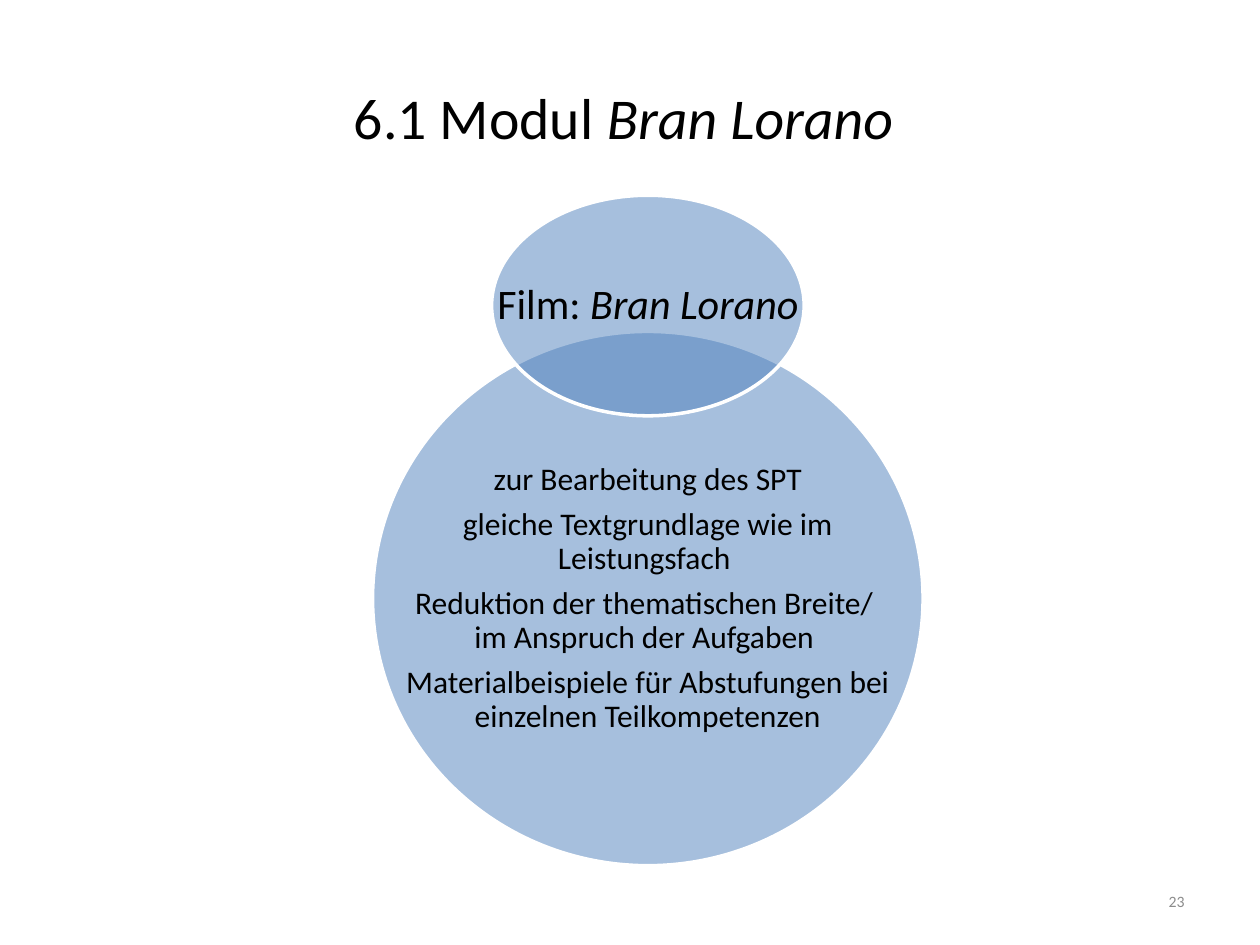
from typing import NamedTuple

from lxml import etree
from pptx import Presentation
from pptx.dml.color import RGBColor
from pptx.enum.shapes import MSO_SHAPE
from pptx.enum.text import MSO_ANCHOR, PP_ALIGN
from pptx.oxml.ns import qn
from pptx.util import Pt

ELLIPSE = MSO_SHAPE.OVAL
MIDDLE = MSO_ANCHOR.MIDDLE
CENTER, RIGHT = PP_ALIGN.CENTER, PP_ALIGN.RIGHT

FONT = "Calibri"
BLACK, WHITE, BLUE, GREY = "000000", "FFFFFF", "4F81BD", "8C8C8C"
FILM = "Bran Lorano"
TITLE_ONLY = 5


class Circle(NamedTuple):
    """An ellipse centred on the diagram axis, with its text."""
    top: float
    width: float
    height: float
    size: float
    lines: list[str]
    italic: str = ""


AXIS = 370.2
CIRCLES = [
    Circle(189.4, 314.6, 305.3, 18, [
        "zur Bearbeitung des SPT",
        "gleiche Textgrundlage wie im Leistungsfach ",
        "Reduktion der thematischen Breite/ \vim Anspruch der Aufgaben ",
        "Materialbeispiele für Abstufungen bei einzelnen Teilkompetenzen",
    ]),
    Circle(111.6, 178.6, 126, 24, ["Film:"], f" {FILM}"),
]


def rgb(color: str) -> RGBColor:
    return RGBColor.from_string(color)


def write(p, text: str, size: float, color: str, align, italic: str = "") -> None:
    """Fill a paragraph, with an optional italic ending."""
    p.text = text
    p.alignment = align
    if italic:
        r = p.add_run()
        r.text = italic
        r.font.italic = True
    for r in p.runs:
        r.font.name = FONT
        r.font.size = Pt(size)
        r.font.color.rgb = rgb(color)


def add_circle(s, c: Circle) -> None:
    box = [Pt(v) for v in (AXIS - c.width / 2, c.top, c.width, c.height)]
    sp = s.shapes.add_shape(ELLIPSE, *box)
    sp.shadow.inherit = False
    sp.fill.solid()
    sp.fill.fore_color.rgb = rgb(BLUE)
    fill = sp._element.spPr.find(qn("a:solidFill"))
    etree.SubElement(fill[0], qn("a:alpha"), val="50000")
    sp.line.color.rgb = rgb(WHITE)
    sp.line.width = Pt(2)

    # The lines run wider than an ellipse's own text area
    tf = s.shapes.add_textbox(*box).text_frame
    tf.word_wrap = True
    tf.vertical_anchor = MIDDLE
    tf.margin_left = tf.margin_right = tf.margin_top = tf.margin_bottom = Pt(2.2)
    for i, line in enumerate(c.lines):
        p = tf.add_paragraph() if i else tf.paragraphs[0]
        write(p, line, c.size, BLACK, CENTER, c.italic)
        p.line_spacing = 0.9
        p.space_after = Pt(0.35 * c.size)


def main() -> None:
    prs = Presentation()
    prs.slide_width, prs.slide_height = Pt(720), Pt(540)
    s = prs.slides.add_slide(prs.slide_layouts[TITLE_ONLY])

    # Title
    title = s.shapes.title
    title.left, title.top, title.width, title.height = Pt(36), Pt(21.6), Pt(648), Pt(90)
    title.text_frame.vertical_anchor = MIDDLE
    write(title.text_frame.paragraphs[0], "6.1 Modul ", 33, BLACK, CENTER, f"{FILM} ")

    # Slide number
    tf = s.shapes.add_textbox(Pt(516), Pt(500.5), Pt(168), Pt(28.75)).text_frame
    tf.word_wrap = True
    tf.vertical_anchor = MIDDLE
    write(tf.paragraphs[0], "23", 9, GREY, RIGHT)

    # Overlapping circles
    for c in CIRCLES:
        add_circle(s, c)

    prs.save("out.pptx")


if __name__ == "__main__":
    main()
